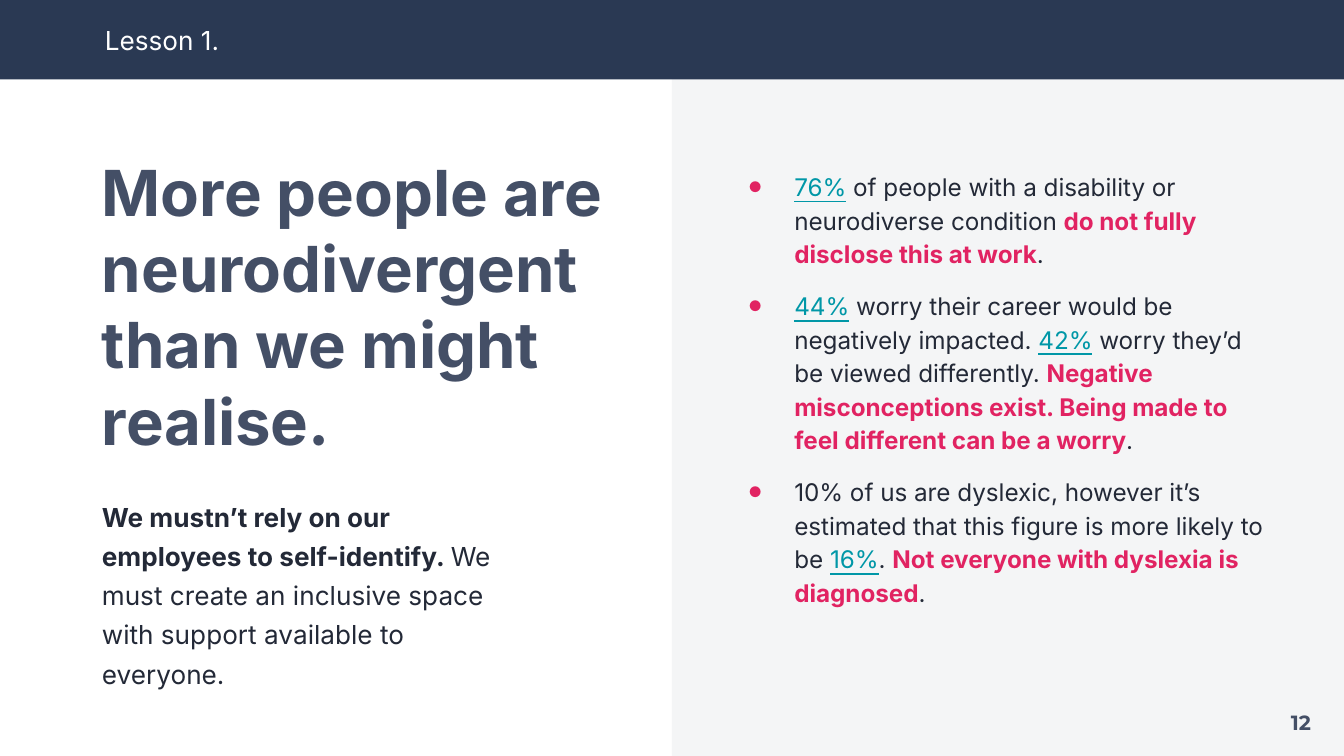
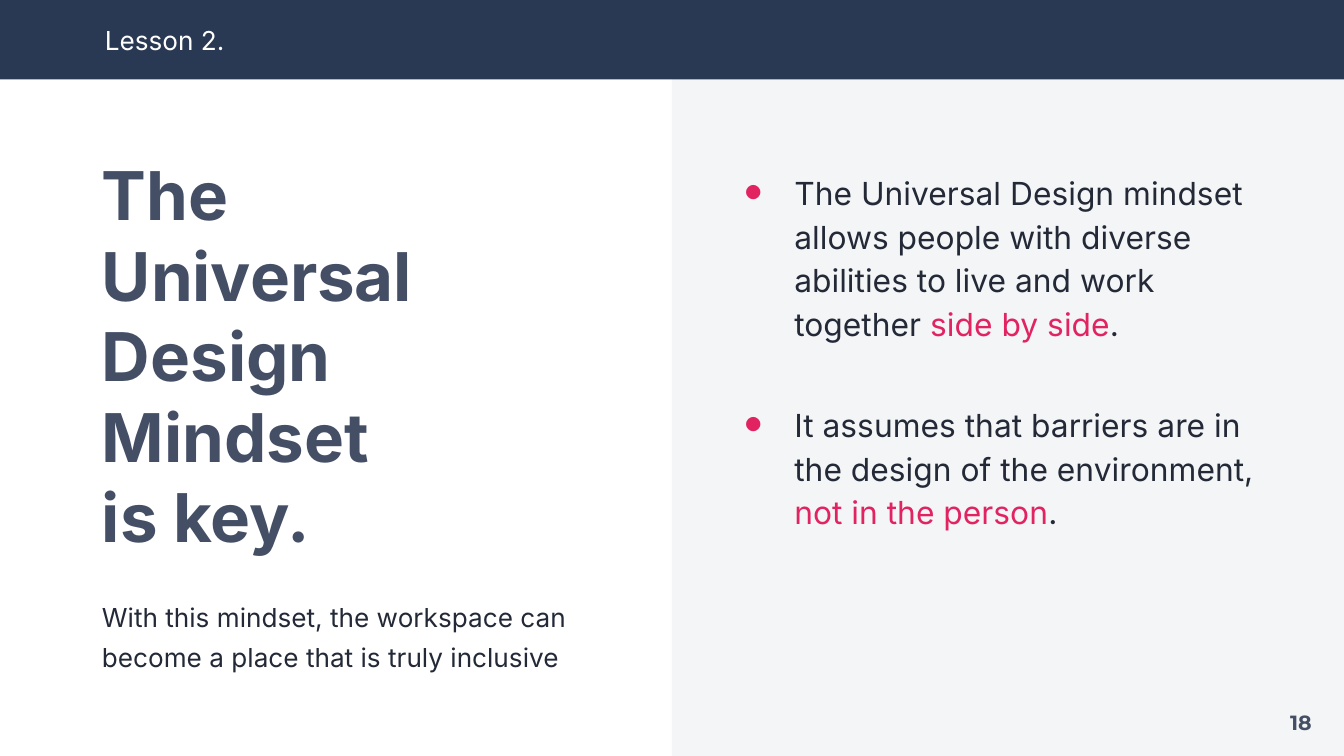
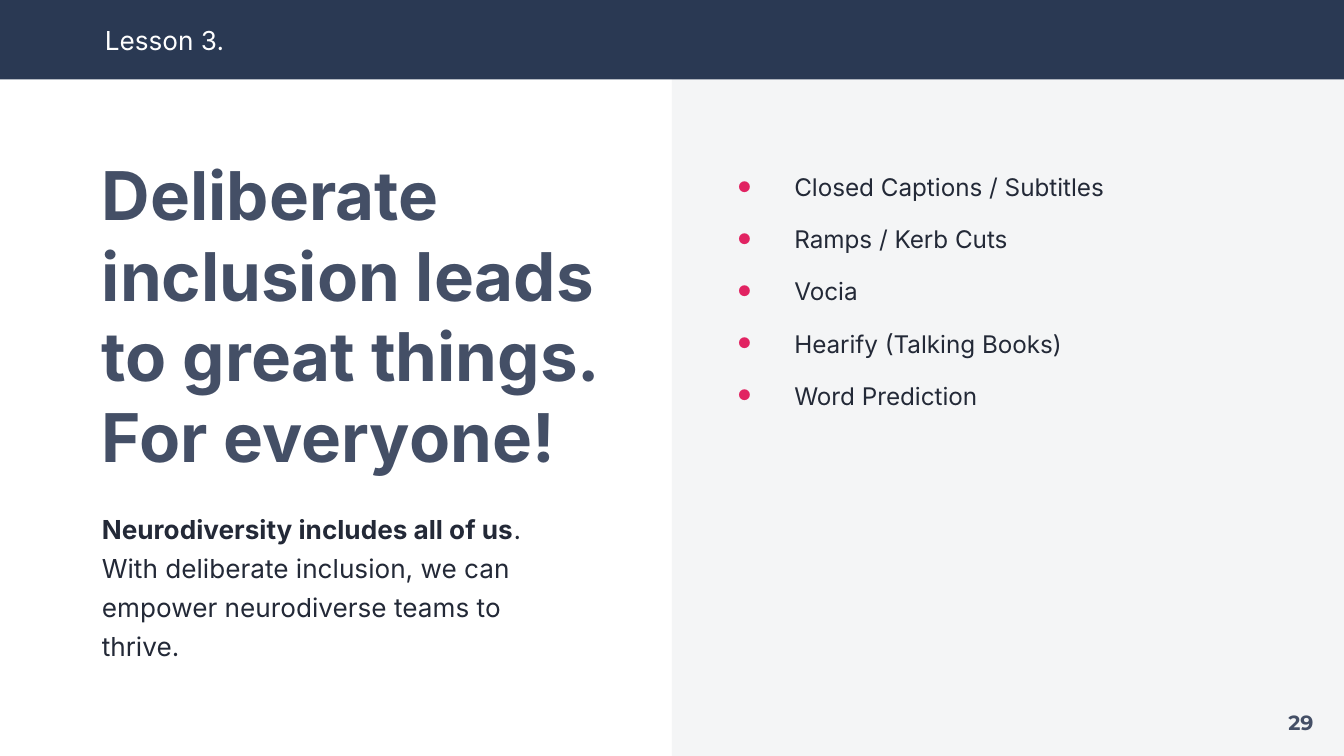
from dataclasses import dataclass
from typing import NamedTuple

from lxml import etree
from pptx import Presentation
from pptx.dml.color import RGBColor
from pptx.enum import shapes, text
from pptx.oxml import ns
from pptx.util import Inches, Pt

# Shared look
NAVY = RGBColor(0x2A, 0x39, 0x53)
SLATE = RGBColor(0x44, 0x4F, 0x66)
INK = RGBColor(0x23, 0x29, 0x37)
PINK = RGBColor(0xE1, 0x23, 0x62)
TEAL = RGBColor(0x00, 0x97, 0xA7)
MIST = RGBColor(0xF4, 0xF5, 0xF6)
WHITE = RGBColor(0xFF, 0xFF, 0xFF)
BODY, DIGIT = "Inter", "Montserrat"
WIDE, BAND = 10, 0.59
HIGH = WIDE * 9 / 16
PAD = (0.1, 0.1, 0.1, 0.1)


class Box(NamedTuple):
    left: float
    top: float
    width: float
    height: float


class Run(NamedTuple):
    words: str
    color: RGBColor = INK
    bold: bool = False
    line: bool = False


class Para(NamedTuple):
    runs: list[Run]
    before: float = 0


def link(words: str) -> Run:
    return Run(words, TEAL, line=True)


def strong(words: str) -> Run:
    return Run(words, PINK, bold=True)


@dataclass
class Lesson:
    number: int
    page: int
    title: list[str]
    title_box: Box
    title_size: float
    lead: list[Run]
    lead_box: Box
    points: list[Para]
    point_high: float
    point_size: float
    hang: float  # distance from bullet to text


def add_para(frame, index: int, runs: list[Run], size: float, font: str = BODY):
    para = frame.paragraphs[0] if index == 0 else frame.add_paragraph()
    for item in runs:
        run = para.add_run()
        run.text = item.words
        run.font.name = font
        run.font.size = Pt(size)
        run.font.bold = item.bold
        run.font.underline = item.line
        run.font.color.rgb = item.color
    return para


def set_frame(shape, pad=PAD, anchor=text.MSO_ANCHOR.TOP):
    frame = shape.text_frame
    frame.word_wrap = True
    frame.vertical_anchor = anchor
    (frame.margin_left, frame.margin_top,
     frame.margin_right, frame.margin_bottom) = map(Inches, pad)
    return frame


def add_text(slide, box: Box, pad=PAD, anchor=text.MSO_ANCHOR.TOP):
    return set_frame(slide.shapes.add_textbox(*map(Inches, box)), pad, anchor)


def add_block(slide, box: Box, color: RGBColor):
    block = slide.shapes.add_shape(
        shapes.MSO_SHAPE.RECTANGLE, *map(Inches, box))
    block.shadow.inherit = False
    block.fill.solid()
    block.fill.fore_color.rgb = color
    block.line.fill.background()
    return block


def indent(para, left: float, first: float = 0) -> None:
    props = para._p.get_or_add_pPr()
    props.set("marL", str(Inches(left)))
    props.set("indent", str(Inches(first)))


def add_bullet(para) -> None:
    props = para._p.get_or_add_pPr()
    tint = etree.SubElement(props, ns.qn("a:buClr"))
    etree.SubElement(tint, ns.qn("a:srgbClr"), val=str(PINK))
    etree.SubElement(props, ns.qn("a:buSzPct"), val="60000")
    etree.SubElement(props, ns.qn("a:buFont"), typeface=BODY)
    etree.SubElement(props, ns.qn("a:buChar"), char="●")


def add_base(slide, lesson: Lesson) -> None:
    # Right panel and page number
    add_block(slide, Box(WIDE / 2, 0, WIDE / 2, HIGH), MIST)
    frame = add_text(slide, Box(9.36, 5.12, 0.64, 0.51),
                     anchor=text.MSO_ANCHOR.MIDDLE)
    para = add_para(frame, 0, [Run(str(lesson.page), SLATE, True)], 11, DIGIT)
    para.alignment = text.PP_ALIGN.CENTER

    # Top band
    band = add_block(slide, Box(0, 0, WIDE, BAND), NAVY)
    frame = set_frame(band, (0.39, 0.1, 0.39, 0.1), text.MSO_ANCHOR.MIDDLE)
    para = add_para(frame, 0, [Run(f"Lesson {lesson.number}.", WHITE)], 14)
    para.alignment = text.PP_ALIGN.LEFT
    indent(para, 0.39)


def add_lesson(deck, lesson: Lesson) -> None:
    slide = deck.slides.add_slide(deck.slide_layouts[6])
    add_base(slide, lesson)

    # Bullet points
    frame = add_text(slide, Box(5.37, 1.18, 4.15, lesson.point_high),
                     (0.04, 0.07, 0.07, 0.07))
    for index, point in enumerate(lesson.points):
        para = add_para(frame, index, point.runs, lesson.point_size)
        indent(para, 0.5, -lesson.hang)
        add_bullet(para)
        para.line_spacing = 1.15
        if point.before:
            para.space_before = Pt(point.before)

    # Title
    frame = add_text(slide, lesson.title_box)
    for index, words in enumerate(lesson.title):
        add_para(frame, index, [Run(words, SLATE, True)], lesson.title_size)

    # Lead text
    frame = add_text(slide, lesson.lead_box)
    add_para(frame, 0, lesson.lead, 14).line_spacing = 1.25


AIDS = ["Closed Captions / Subtitles", "Ramps / Kerb Cuts", "Vocia",
        "Hearify (Talking Books)", "Word Prediction"]

LESSONS = [
    Lesson(
        1, 12,
        ["More people are neurodivergent than we might realise."],
        Box(0.66, 1.04, 4.05, 2.18), 34,
        [Run("We mustn’t rely on our employees to self-identify. ", bold=True),
         Run("We must create an inclusive space with support available to "
             "everyone.")],
        Box(0.66, 3.57, 3.36, 1.62),
        [Para([link("76%"),
               Run(" of people with a disability or neurodiverse condition "),
               strong("do not fully disclose this at work"), Run(".")]),
         Para([link("44%"),
               Run(" worry their career would be negatively impacted. "),
               link("42%"), Run(" worry they’d be viewed differently. "),
               strong("Negative misconceptions exist. Being made to feel "
                      "different can be a worry"), Run(".")], 10),
         Para([Run("10% of us are dyslexic, however it’s estimated that this "
                   "figure is more likely to be "),
               link("16%"), Run(". "),
               strong("Not everyone with dyslexia is diagnosed"),
               Run(".")], 10)],
        4.26, 13, 0.34),
    Lesson(
        2, 18,
        ["The", "Universal Design", "Mindset", "is key."],
        Box(0.66, 1.04, 4.15, 1.11), 36,
        [Run("With this mindset, the workspace can become a place that is "
             "truly inclusive")],
        Box(0.66, 4.32, 3.89, 0.73),
        [Para([Run("The Universal Design mindset allows people with diverse "
                   "abilities to live and work together "),
               Run("side by side", PINK), Run(".")]),
         Para([Run("It assumes that barriers are in the design of the "
                   "environment, "),
               Run("not in the person", PINK), Run(".")], 30.5)],
        3.79, 17, 0.37),
    Lesson(
        3, 29,
        ["Deliberate inclusion leads to great things. For everyone!"],
        Box(0.66, 1.04, 4.15, 1.11), 36,
        [Run("Neurodiversity includes all of us", bold=True),
         Run(". With deliberate inclusion, we can empower neurodiverse teams "
             "to thrive.")],
        Box(0.66, 3.66, 3.36, 1.32),
        [Para([Run(aid)], 10 if index else 0)
         for index, aid in enumerate(AIDS)],
        4.11, 13, 0.42),
]


def main() -> None:
    deck = Presentation()
    deck.slide_width, deck.slide_height = Inches(WIDE), Inches(HIGH)
    for lesson in LESSONS:
        add_lesson(deck, lesson)
    deck.save("out.pptx")


if __name__ == "__main__":
    main()
